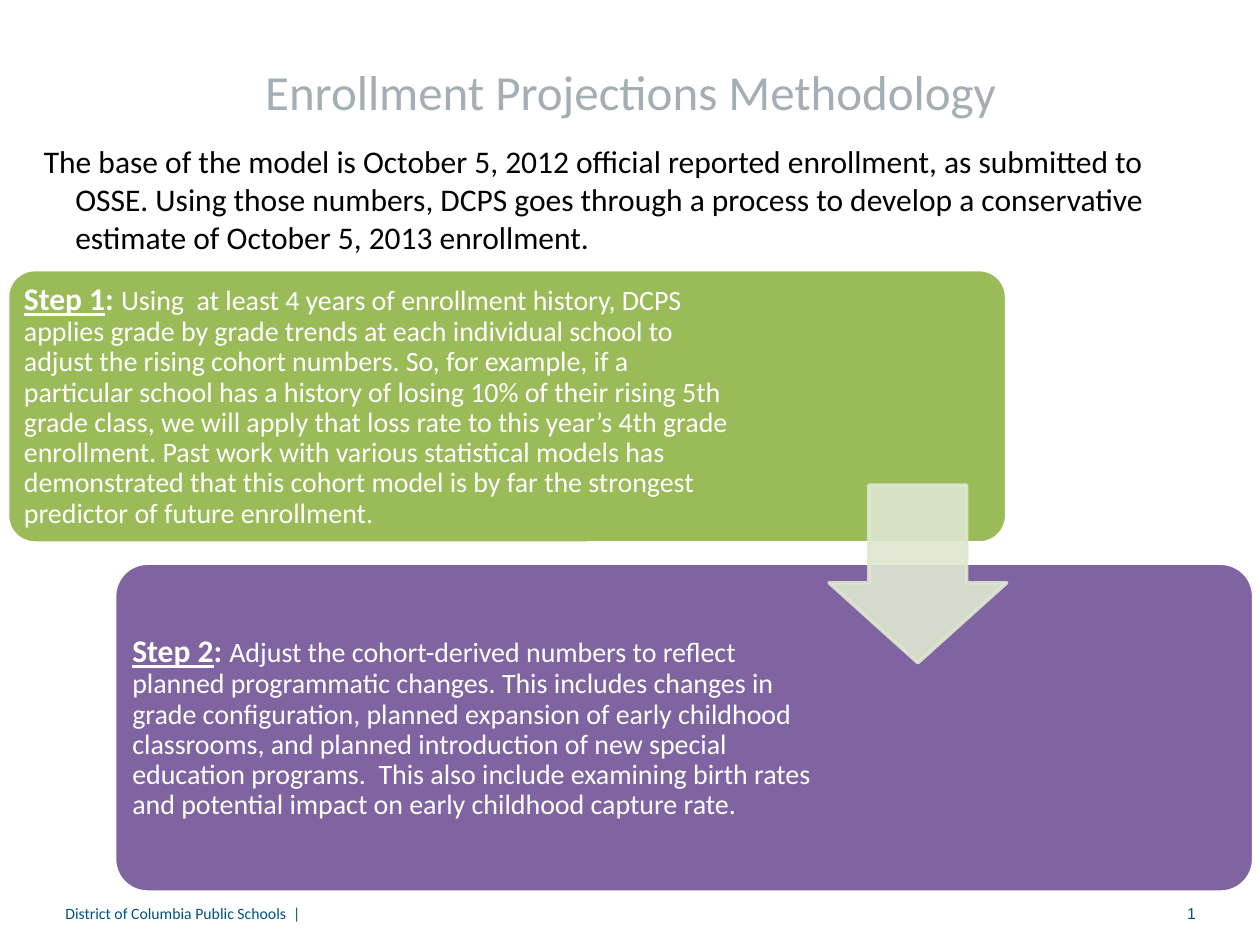
from dataclasses import dataclass
from typing import Optional

from lxml.etree import SubElement
from pptx import Presentation
from pptx.dml.color import RGBColor
from pptx.enum.shapes import MSO_SHAPE as Shape
from pptx.enum.text import MSO_ANCHOR as Anchor, MSO_AUTO_SIZE as AutoSize, PP_ALIGN as Align
from pptx.oxml.ns import qn
from pptx.util import Pt

PX = 9144


@dataclass(frozen=True)
class Theme:
    font: str = "Calibri"
    number_font: str = "Arial"
    title: str = "A4AEB5"
    footer: str = "005283"
    body: str = "000000"
    white: str = "FFFFFF"
    green: str = "9BBB59"
    purple: str = "8064A2"
    arrow: str = "DEE7D1"
    title_size: int = 28
    lead_size: int = 18
    step_size: int = 16
    footer_size: int = 9
    outline: int = 2
    arrow_opacity: int = 90


@dataclass(frozen=True)
class Box:
    x: int
    y: int
    w: int
    h: int

    def emu(self) -> tuple[int, ...]:
        return tuple(v * PX for v in (self.x, self.y, self.w, self.h))


@dataclass(frozen=True)
class Run:
    text: str
    size: int
    color: str
    font: str
    bold: bool = False
    underline: bool = False


@dataclass(frozen=True)
class Step:
    panel: Box
    text_box: Box
    right_inset: int
    color: str
    label: str
    text: str


T = Theme()

STEPS = [
    Step(Box(6, 214, 793, 217), Box(12, 220, 569, 205), 0, T.green, "Step 1",
         "Using  at least 4 years of enrollment history, DCPS applies grade by grade trends "
         "at each individual school to adjust the rising cohort numbers. So, for example, if a "
         "particular school has a history of losing 10% of their rising 5th grade class, we will "
         "apply that loss rate to this year’s 4th grade enrollment. Past work with various "
         "statistical models has demonstrated that this cohort model is by far the strongest "
         "predictor of future enrollment."),
    Step(Box(91, 447, 904, 261), Box(98, 455, 568, 246), 7, T.purple, "Step 2",
         "Adjust the cohort-derived numbers to reflect planned programmatic changes. This "
         "includes changes in grade configuration, planned expansion of early childhood "
         "classrooms, and planned introduction of new special education programs.  This also "
         "include examining birth rates and potential impact on early childhood capture rate."),
]


def add_text(s, box: Box, runs: list[Run], *, align: Align = Align.LEFT,
             anchor: Anchor = Anchor.MIDDLE, insets: Optional[tuple[int, int, int, int]] = None,
             hanging: int = 0, line_spacing: Optional[float] = None, grow: bool = False) -> None:
    tf = s.shapes.add_textbox(*box.emu()).text_frame
    tf.word_wrap = True
    tf.vertical_anchor = anchor
    if grow:
        tf.auto_size = AutoSize.SHAPE_TO_FIT_TEXT
    if insets:
        tf.margin_left, tf.margin_top, tf.margin_right, tf.margin_bottom = (v * PX for v in insets)
    p = tf.paragraphs[0]
    p.alignment = align
    if line_spacing:
        p.line_spacing = line_spacing
    if hanging:
        pPr = p._p.get_or_add_pPr()
        pPr.set("marL", str(hanging * PX))
        pPr.set("indent", str(-hanging * PX))
    for run in runs:
        r = p.add_run()
        r.text = run.text
        r.font.name = run.font
        r.font.size = Pt(run.size)
        r.font.bold = run.bold
        r.font.underline = run.underline
        r.font.color.rgb = RGBColor.from_string(run.color)


def add_shape(s, kind: Shape, box: Box, adjustments: list[float], fill: str, line: str,
              opacity: int = 100) -> None:
    sp = s.shapes.add_shape(kind, *box.emu())
    sp.shadow.inherit = False
    for i, value in enumerate(adjustments):
        sp.adjustments[i] = value
    sp.fill.solid()
    sp.fill.fore_color.rgb = RGBColor.from_string(fill)
    sp.line.color.rgb = RGBColor.from_string(line)
    sp.line.width = Pt(T.outline)
    if opacity < 100:
        for color in sp._element.spPr.iter(qn("a:srgbClr")):
            SubElement(color, qn("a:alpha")).set("val", str(opacity * 1000))


def add_step(s, step: Step) -> None:
    add_shape(s, Shape.ROUNDED_RECTANGLE, step.panel, [0.1], step.color, T.white)
    add_text(s, step.text_box, [
        Run(step.label, T.lead_size, T.white, T.font, bold=True, underline=True),
        Run(": ", T.lead_size, T.white, T.font, bold=True),
        Run(step.text, T.step_size, T.white, T.font),
    ], insets=(7, 7, step.right_inset, 7), line_spacing=0.9)


def main() -> None:
    prs = Presentation()
    prs.slide_width, prs.slide_height = 1000 * PX, 750 * PX
    s = prs.slides.add_slide(prs.slide_layouts[6])

    add_text(s, Box(42, 33, 917, 78),
             [Run("Enrollment Projections Methodology", T.title_size, T.title, T.font)],
             align=Align.CENTER)
    add_text(s, Box(42, 708, 658, 33),
             [Run("District of Columbia Public Schools  |", T.footer_size, T.footer, T.font)])
    add_text(s, Box(717, 708, 242, 33),
             [Run("1", T.footer_size, T.footer, T.number_font)], align=Align.RIGHT)
    add_text(s, Box(25, 108, 900, 229),
             [Run("The base of the model is October 5, 2012 official reported enrollment, as "
                  "submitted to OSSE. Using those numbers, DCPS goes through a process to develop "
                  "a conservative estimate of October 5, 2013 enrollment.",
                  T.lead_size, T.body, T.font)],
             anchor=Anchor.TOP, hanging=25, grow=True)
    for step in STEPS:
        add_step(s, step)
    add_shape(s, Shape.DOWN_ARROW, Box(658, 385, 141, 141), [0.55, 0.45], T.arrow, T.arrow,
              T.arrow_opacity)

    prs.save("out.pptx")


if __name__ == "__main__":
    main()
